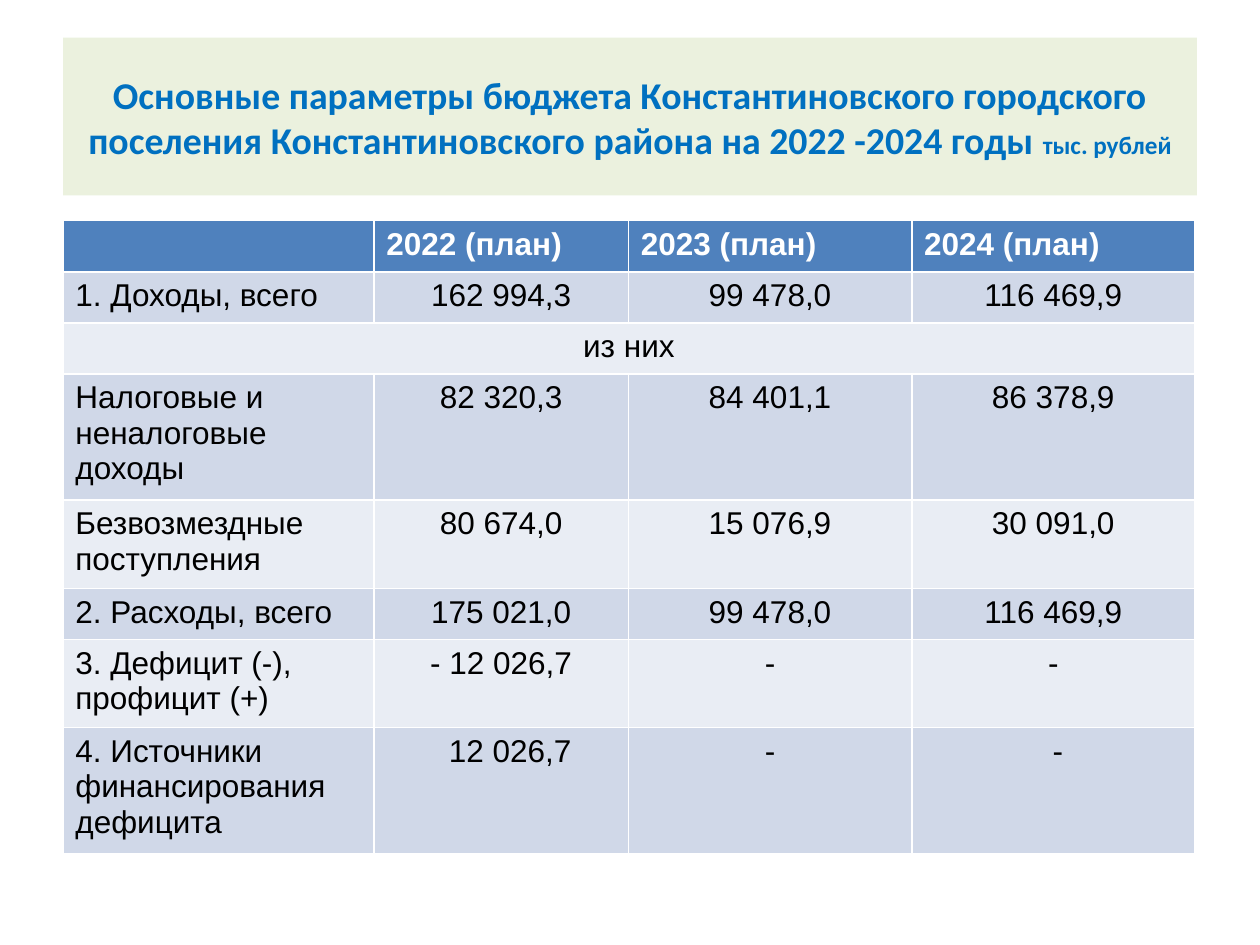
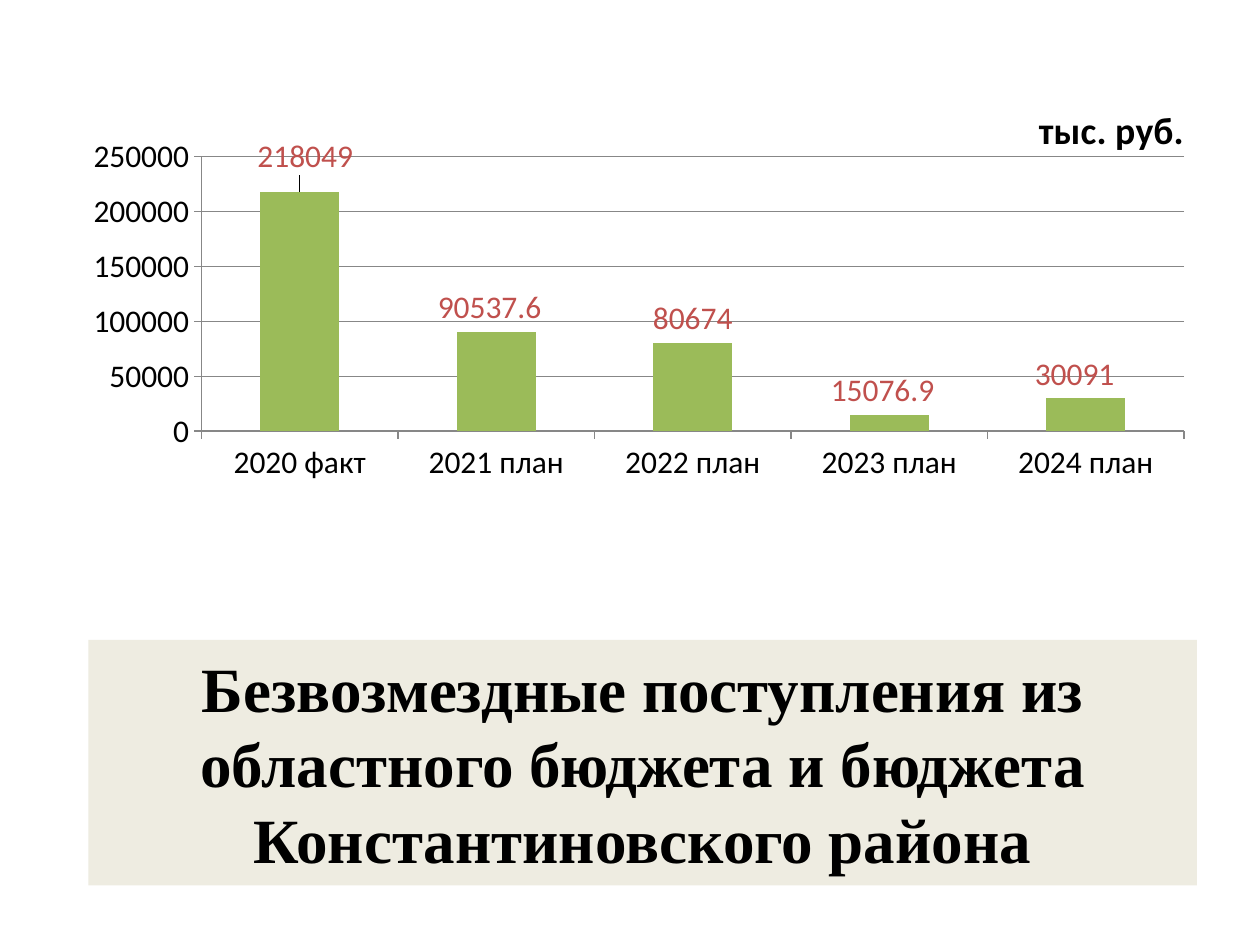
from lxml.etree import SubElement
from pptx import Presentation
from pptx.chart.data import CategoryChartData
from pptx.dml.color import RGBColor
from pptx.enum.chart import XL_CHART_TYPE, XL_LABEL_POSITION, XL_TICK_MARK
from pptx.enum.text import MSO_ANCHOR, MSO_AUTO_SIZE, PP_ALIGN
from pptx.oxml import parse_xml
from pptx.oxml.ns import nsdecls, qn
from pptx.util import Cm, Pt

BLUE, GREEN, RED, GREY = "4F81BD", "9BBB59", "C0504D", "878787"
TITLE_BLUE, BLACK, WHITE = "0070C0", "000000", "FFFFFF"
PALE_GREEN, PALE_TAN = "EBF1DE", "EEECE1"
BANDS = ("D0D8E8", "E9EDF4")

BUDGET_TITLE = [
    ("Основные параметры бюджета Константиновского городского поселения "
     "Константиновского района на 2022 -2024 годы ", 21.6),
    ("тыс. рублей", 14.4),
]
BUDGET_HEADER = ("", "2022 (план)", "2023 (план)", "2024 (план)")
BUDGET_ROWS = [
    ("1. Доходы, всего", "162 994,3", "99 478,0", "116 469,9"),
    ("из них",),
    ("Налоговые и неналоговые доходы", "82 320,3", "84 401,1", "86 378,9"),
    ("Безвозмездные поступления", "80 674,0", "15 076,9", "30 091,0"),
    ("2. Расходы, всего", "175 021,0", "99 478,0", "116 469,9"),
    ("3. Дефицит (-), профицит (+)", "- 12 026,7", "-", "-"),
    ("4. Источники финансирования дефицита", "12 026,7", "-", "-"),
]
COLUMN_WIDTHS = (6.27, 5.13, 5.71, 5.71)
ROW_HEIGHTS = (1.03, 1.03, 1.03, 2.54, 1.78, 1.03, 1.78, 2.54)
INDENTS = {(7, 1): 0.36, (7, 3): 0.18}  # extra left margin by (row, column)

GRANTS_TITLE = [("Безвозмездные поступления из областного бюджета и бюджета "
                 "Константиновского района", 36)]
# year, amount, shift of the label as a share of the chart size
GRANTS = [
    ("2020 факт", 218049, (0.005, -0.02)),
    ("2021 план", 90537.6, (-0.006, 0)),
    ("2022 план", 80674, (0, 0)),
    ("2023 план", 15076.9, (-0.006, 0)),
    ("2024 план", 30091, (-0.01, 0)),
]


def color(value):
    return RGBColor.from_string(value)


def paint(target, value):
    target.fill.solid()
    target.fill.fore_color.rgb = color(value)


def set_font(font, size=18, name="Calibri", ink=BLACK, bold=False):
    font.size, font.name, font.bold = Pt(size), name, bold
    font.color.rgb = color(ink)


def write(paragraph, text, align=PP_ALIGN.LEFT, **style):
    paragraph.alignment = align
    span = paragraph.add_run()
    span.text = text
    set_font(span.font, **style)


def add_page(deck, title, place, fill, **style):
    """Add a title-only slide whose title is a filled band."""
    page = deck.slides.add_slide(deck.slide_layouts[5])
    box = page.shapes.title
    box.left, box.top, box.width, box.height = map(Cm, place)
    paint(box, fill)
    frame = box.text_frame
    frame.word_wrap = True
    frame.auto_size = MSO_AUTO_SIZE.NONE
    frame.vertical_anchor = MSO_ANCHOR.MIDDLE
    for text, size in title:
        write(frame.paragraphs[0], text, PP_ALIGN.CENTER,
              size=size, bold=True, **style)
    return page


def add_budget_table(page):
    rows = [BUDGET_HEADER, *BUDGET_ROWS]
    table = page.shapes.add_table(
        len(rows), len(COLUMN_WIDTHS), Cm(1.27), Cm(4.45),
        Cm(sum(COLUMN_WIDTHS)), Cm(sum(ROW_HEIGHTS))).table
    for column, width in zip(table.columns, COLUMN_WIDTHS):
        column.width = Cm(width)
    for row, height in zip(table.rows, ROW_HEIGHTS):
        row.height = Cm(height)

    for r, texts in enumerate(rows):
        header, spanning = r == 0, len(texts) == 1
        for c in range(len(COLUMN_WIDTHS)):
            paint(table.cell(r, c), BLUE if header else BANDS[(r - 1) % 2])
        if spanning:
            table.cell(r, 0).merge(table.cell(r, len(COLUMN_WIDTHS) - 1))
        for c, text in enumerate(texts):
            cell = table.cell(r, c)
            cell.margin_left = Cm(0.25 + INDENTS.get((r, c), 0))
            centred = spanning or (c > 0 and not header)
            if text:
                write(cell.text_frame.paragraphs[0], text,
                      PP_ALIGN.CENTER if centred else PP_ALIGN.LEFT,
                      name="Arial", ink=WHITE if header else BLACK, bold=header)


def set_layout(parent, index, **values):
    """Give a chart part a manual layout, placed as its child number index."""
    for old in parent.findall(qn("c:layout")):
        parent.remove(old)
    layout = parse_xml(f"<c:layout {nsdecls('c')}><c:manualLayout/></c:layout>")
    for tag, value in values.items():
        SubElement(layout[0], qn(f"c:{tag}")).set("val", str(value))
    parent.insert(index, layout)


def style_axes(chart):
    for axis in (chart.category_axis, chart.value_axis):
        set_font(axis.tick_labels.font)
        axis.major_tick_mark = XL_TICK_MARK.OUTSIDE
        axis.minor_tick_mark = XL_TICK_MARK.NONE
        axis.format.line.color.rgb = color(GREY)
    values = chart.value_axis
    values.minimum_scale, values.maximum_scale = 0, 250000
    values.major_unit = 50000
    values.has_major_gridlines = True
    values.major_gridlines.format.line.color.rgb = color(GREY)


def add_grants_chart(page):
    data = CategoryChartData()
    data.categories = [year for year, _, _ in GRANTS]
    data.add_series("Series 1", [amount for _, amount, _ in GRANTS])
    chart = page.shapes.add_chart(
        XL_CHART_TYPE.COLUMN_CLUSTERED,
        Cm(1.45), Cm(1.27), Cm(22.56), Cm(11.18), data).chart
    set_font(chart.font)
    chart.has_legend = False
    style_axes(chart)

    chart.has_title = True
    write(chart.chart_title.text_frame.paragraphs[0], "тыс. руб.",
          PP_ALIGN.CENTER, size=21.6, bold=True)
    set_layout(chart.chart_title._element, 1,
               xMode="edge", yMode="edge", x=0.86, y=0.06)
    set_layout(chart._chartSpace.chart.plotArea, 0, layoutTarget="inner",
               xMode="edge", yMode="edge", x=0.116, y=0.169, w=0.88, h=0.495)

    plot = chart.plots[0]
    plot.gap_width = 150
    plot.vary_by_categories = False
    series = plot.series[0]
    paint(series.format, GREEN)
    labels = series.data_labels
    labels.show_value = True
    labels.position = XL_LABEL_POSITION.OUTSIDE_END
    set_font(labels.font, ink=RED)
    for index in range(len(GRANTS)):
        label = series.points[index].data_label
        set_font(label.font, ink=RED)
        label.position = XL_LABEL_POSITION.OUTSIDE_END
    for element, (_, _, (x, y)) in zip(
            series._element.iter(qn("c:dLbl")), GRANTS):
        set_layout(element, 1, x=x, y=y)


def main():
    deck = Presentation()
    deck.slide_width, deck.slide_height = Cm(25.4), Cm(19.05)
    budget = add_page(deck, BUDGET_TITLE, (1.27, 0.76, 22.86, 3.18),
                      PALE_GREEN, ink=TITLE_BLUE)
    add_budget_table(budget)
    grants = add_page(deck, GRANTS_TITLE, (1.78, 12.9, 22.35, 4.95),
                      PALE_TAN, name="Times New Roman")
    add_grants_chart(grants)
    deck.save("out.pptx")


if __name__ == "__main__":
    main()
